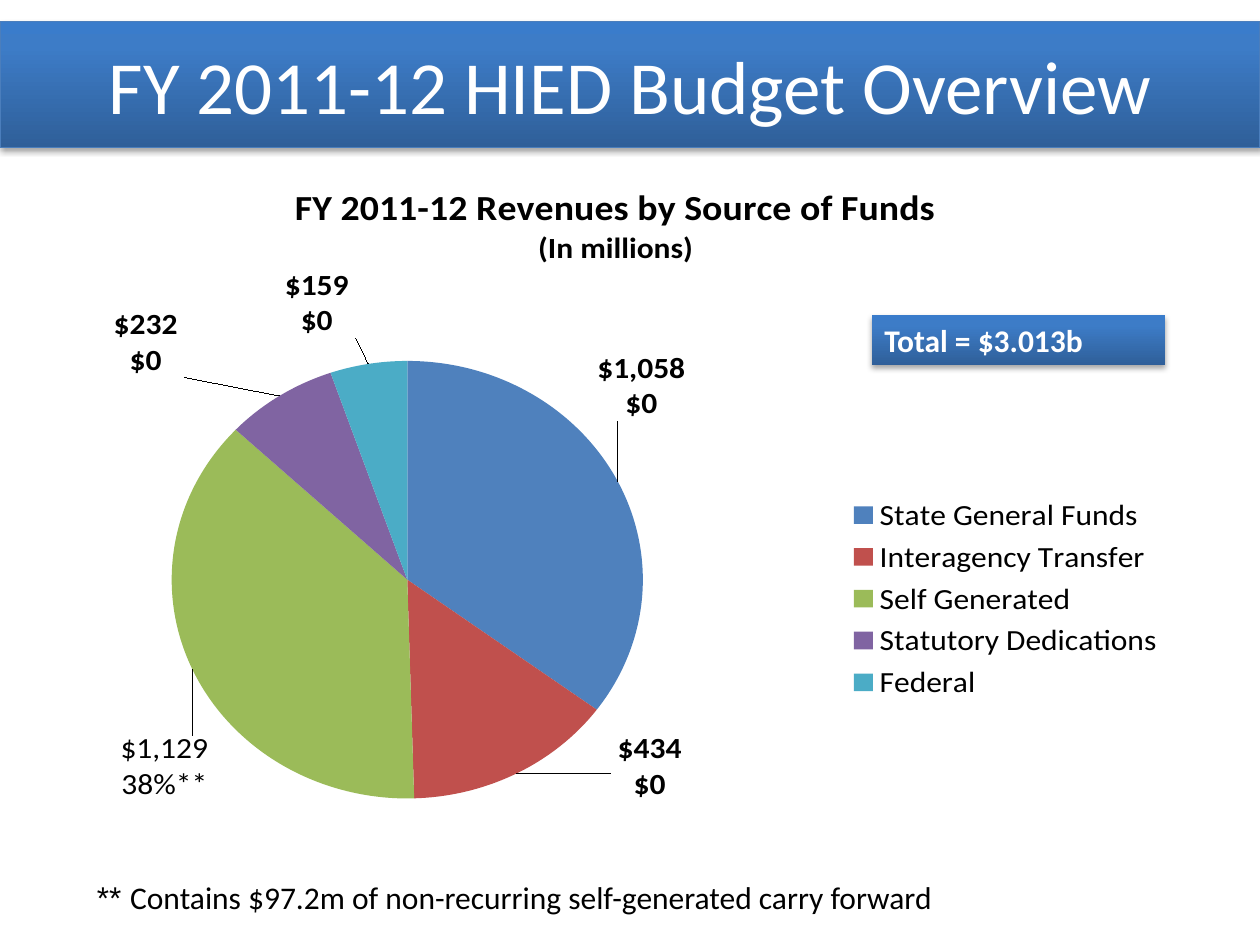
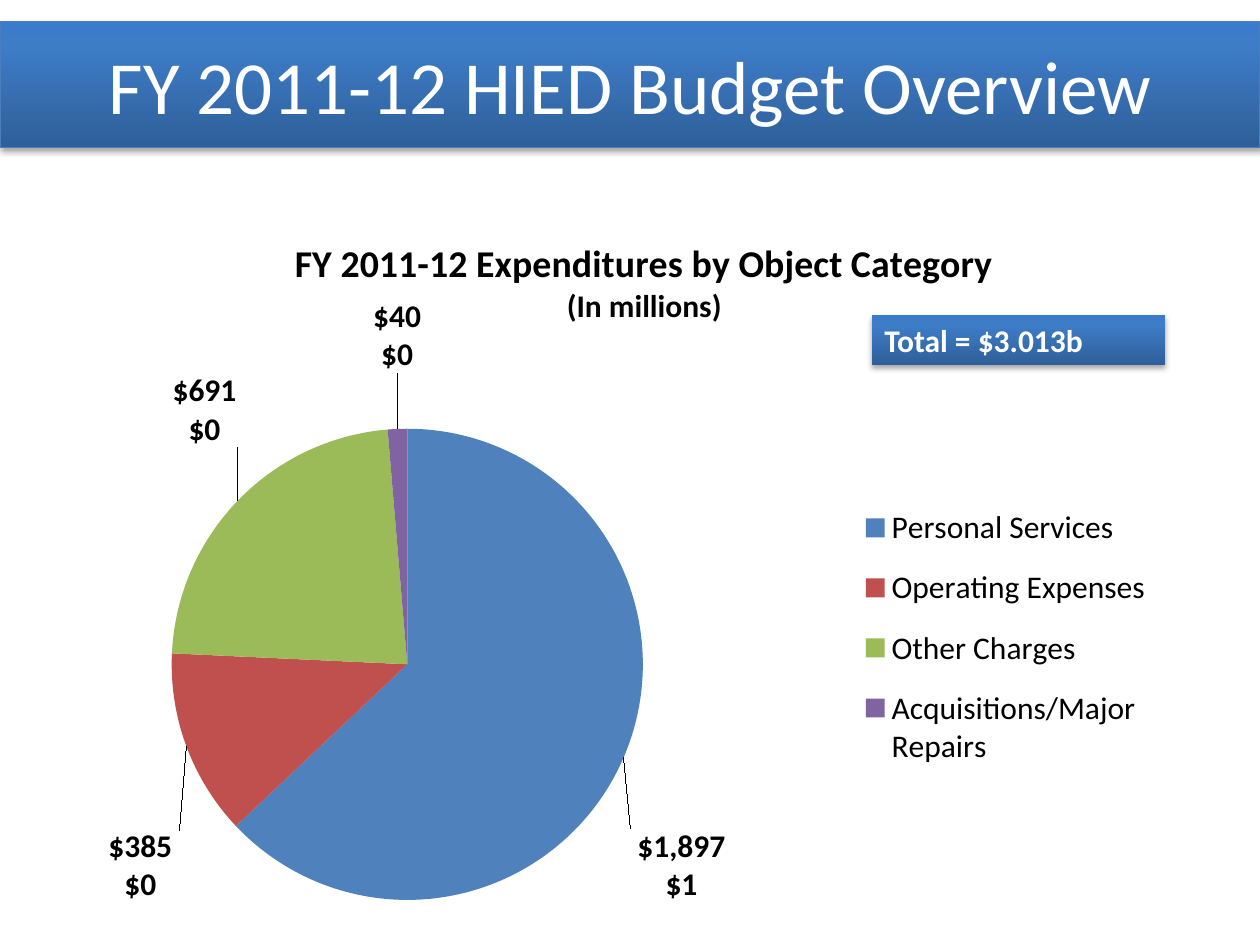
from pptx import Presentation
from pptx.chart.data import CategoryChartData
from pptx.dml.color import RGBColor
from pptx.enum.chart import XL_CHART_TYPE, XL_LEGEND_POSITION
from pptx.enum.shapes import MSO_SHAPE
from pptx.enum.text import MSO_ANCHOR, MSO_AUTO_SIZE, PP_ALIGN
from pptx.oxml import parse_xml
from pptx.oxml.ns import nsdecls, qn
from pptx.util import Inches, Pt

WHITE = RGBColor(0xFF, 0xFF, 0xFF)
BLACK = RGBColor(0, 0, 0)
EDGE = RGBColor(0x4B, 0x7E, 0xBC)
DEEP = RGBColor(0x2F, 0x5F, 0x99)
MID = RGBColor(0x3D, 0x7C, 0xC7)
LIGHT = RGBColor(0x3A, 0x7C, 0xCB)
SLICES = [
    RGBColor(0x4F, 0x81, 0xBD),
    RGBColor(0xC0, 0x50, 0x4D),
    RGBColor(0x9B, 0xBB, 0x59),
    RGBColor(0x80, 0x64, 0xA2),
    RGBColor(0x4B, 0xAC, 0xC6),
]
FONT = "Calibri"
MONEY = '_("$"* #,##0_);_("$"* \\(#,##0\\);_("$"* "-"??_);_(@_)'
HEAD = "FY 2011-12 HIED Budget Overview"
TOTAL = "Total = $3.013b"


def layout(x, y, w=None, h=None, inner=False, shift=False):
    target = '<c:layoutTarget val="inner"/>' if inner else ""
    modes = "" if shift else '<c:xMode val="edge"/><c:yMode val="edge"/>'
    sizes = f'<c:w val="{w}"/><c:h val="{h}"/>' if w else ""
    return parse_xml(
        f'<c:layout {nsdecls("c")}><c:manualLayout>{target}{modes}'
        f'<c:x val="{x}"/><c:y val="{y}"/>{sizes}</c:manualLayout></c:layout>')


def place(node, index, item):
    for old in node.findall(qn("c:layout")):
        node.remove(old)
    node.insert(index, item)


class Deck:
    def __init__(self):
        self.prs = Presentation()
        self.prs.slide_width = Inches(10)
        self.prs.slide_height = Inches(7.5)
        self.slide = None

    def page(self):
        self.slide = self.prs.slides.add_slide(self.prs.slide_layouts[6])
        self.band(0, 0.17, 10, 1, HEAD, 42.9, edge=True)

    def run(self, para, text, size, color=BLACK, bold=False, font=FONT):
        run = para.add_run()
        run.text = text
        run.font.name = font
        run.font.size = Pt(size)
        run.font.bold = bold
        run.font.color.rgb = color

    def band(self, x, y, w, h, text, size, edge=False):
        box = self.slide.shapes.add_shape(
            MSO_SHAPE.RECTANGLE, Inches(x), Inches(y), Inches(w), Inches(h))
        if edge:
            box.line.color.rgb = EDGE
            box.line.width = Pt(0.75)
        else:
            box.line.fill.background()
        self.shade(box)
        frame = box.text_frame
        frame.word_wrap = True
        frame.vertical_anchor = MSO_ANCHOR.MIDDLE if edge else MSO_ANCHOR.TOP
        para = frame.paragraphs[0]
        para.alignment = PP_ALIGN.CENTER if edge else PP_ALIGN.LEFT
        self.run(para, text, size, WHITE, bold=not edge)

    def shade(self, box):
        box.fill.background()
        box.shadow.inherit = False
        props = box._element.spPr
        stops = "".join(
            f'<a:gs pos="{pos * 1000}"><a:srgbClr val="{color}"/></a:gs>'
            for pos, color in ((0, DEEP), (80, MID), (100, LIGHT)))
        props.replace(props.find(qn("a:noFill")), parse_xml(
            f'<a:gradFill {nsdecls("a")} rotWithShape="1"><a:gsLst>{stops}</a:gsLst>'
            '<a:lin ang="16200000" scaled="0"/></a:gradFill>'))
        props.find(qn("a:effectLst")).append(parse_xml(
            f'<a:outerShdw {nsdecls("a")} blurRad="40000" dist="23000" dir="5400000" '
            'rotWithShape="0"><a:srgbClr val="000000"><a:alpha val="35000"/>'
            '</a:srgbClr></a:outerShdw>'))

    def note(self, x, y, w, h, runs):
        box = self.slide.shapes.add_textbox(
            Inches(x), Inches(y), Inches(w), Inches(h))
        box.text_frame.word_wrap = False
        box.text_frame.auto_size = MSO_AUTO_SIZE.SHAPE_TO_FIT_TEXT
        for text, font in runs:
            self.run(box.text_frame.paragraphs[0], text, 18, font=font)

    def pie(self, y, title, items, shifts, key, notes):
        data = CategoryChartData(number_format=MONEY)
        data.categories = [name for name, _ in items]
        data.add_series("Series 1", [value for _, value in items])
        chart = self.slide.shapes.add_chart(
            XL_CHART_TYPE.PIE, Inches(0.42), Inches(y), Inches(9), Inches(5.42),
            data).chart
        chart.font.size = Pt(18)
        chart.font.name = FONT
        chart.font.color.rgb = BLACK
        self.title(chart, title)
        chart.has_legend = True
        chart.legend.position = XL_LEGEND_POSITION.RIGHT
        chart.legend.include_in_layout = False
        place(chart.legend._element, 1, layout(*key))
        area = chart._chartSpace.chart.plotArea
        place(area, 0, layout(0.02, 0.305, 0.585, 0.69, inner=True))
        plot = chart.plots[0]
        plot.vary_by_categories = True
        series = plot.series[0]
        for index in range(len(items)):
            fill = series.points[index].format.fill
            fill.solid()
            fill.fore_color.rgb = SLICES[index]
        self.labels(series, shifts, notes)

    def title(self, chart, text):
        chart.has_title = True
        title = chart.chart_title
        title.include_in_layout = False
        frame = title.text_frame
        self.run(frame.paragraphs[0], text, 21.6, bold=True)
        self.run(frame.add_paragraph(), "(In millions)", 18, bold=True)
        for para in frame.paragraphs:
            para.alignment = PP_ALIGN.CENTER
        place(title._element, 1, layout(0.21, 0.02))

    def labels(self, series, shifts, notes):
        labels = series.data_labels
        node = labels._element
        for child in list(node):
            node.remove(child)
        form = MONEY.replace('"', "&quot;")
        style = (
            f'<c:numFmt formatCode="{form}" sourceLinked="0"/>'
            '<c:spPr><a:noFill/><a:ln><a:noFill/></a:ln></c:spPr>'
            '<c:txPr><a:bodyPr/><a:lstStyle/><a:p><a:pPr><a:defRPr sz="1800" b="1">'
            f'<a:solidFill><a:srgbClr val="{BLACK}"/></a:solidFill>'
            f'<a:latin typeface="{FONT}"/></a:defRPr></a:pPr>'
            '<a:endParaRPr lang="en-US"/></a:p></c:txPr>'
            '<c:dLblPos val="outEnd"/><c:showLegendKey val="0"/><c:showVal val="1"/>'
            '<c:showCatName val="0"/><c:showSerName val="0"/><c:showPercent val="1"/>'
            '<c:showBubbleSize val="0"/><c:separator>\n</c:separator>')
        for index, shift in enumerate(shifts):
            label = parse_xml(
                f'<c:dLbl {nsdecls("c", "a")}><c:idx val="{index}"/>{style}</c:dLbl>')
            label.insert(1, layout(*shift, shift=True))
            node.append(label)
        rest = parse_xml(
            f'<c:dLbls {nsdecls("c", "a")}>{style}<c:showLeaderLines val="1"/></c:dLbls>')
        for child in list(rest):
            node.append(child)
        for index, lines in notes.items():
            frame = series.points[index].data_label.text_frame
            for row, line in enumerate(lines):
                para = frame.add_paragraph() if row else frame.paragraphs[0]
                self.run(para, line, 18)


def main():
    deck = Deck()
    deck.page()
    deck.pie(
        1.33, "FY 2011-12 Revenues by Source of Funds",
        [("State General Funds", 1058), ("Interagency Transfer", 434),
         ("Self Generated", 1129), ("Statutory Dedications", 232),
         ("Federal", 159)],
        [(-0.03, -0.09), (0.08, -0.07), (0.02, 0.1), (-0.08, -0.02), (-0.01, -0.03)],
        (0.7, 0.51, 0.28, 0.34), {2: ["$1,129", "38%**"]})
    deck.band(6.92, 2.5, 2.33, 0.4, TOTAL, 18)
    deck.note(0.67, 6.92, 6.91, 0.4, [
        ("** ", "Arial"),
        ("Contains $97.2m of non-recurring self-generated carry forward", FONT)])
    deck.page()
    deck.pie(
        1.75, "FY 2011-12 Expenditures by Object Category",
        [("Personal Services", 1897), ("Operating Expenses", 385),
         ("Other Charges", 691), ("Acquisitions/Major Repairs", 40)],
        [(0, 0.1), (0, 0.12), (0.01, -0.07), (0, -0.07)],
        (0.71, 0.39, 0.26, 0.44), {})
    deck.band(6.92, 2.5, 2.33, 0.4, TOTAL, 18)
    deck.prs.save("out.pptx")


if __name__ == "__main__":
    main()
